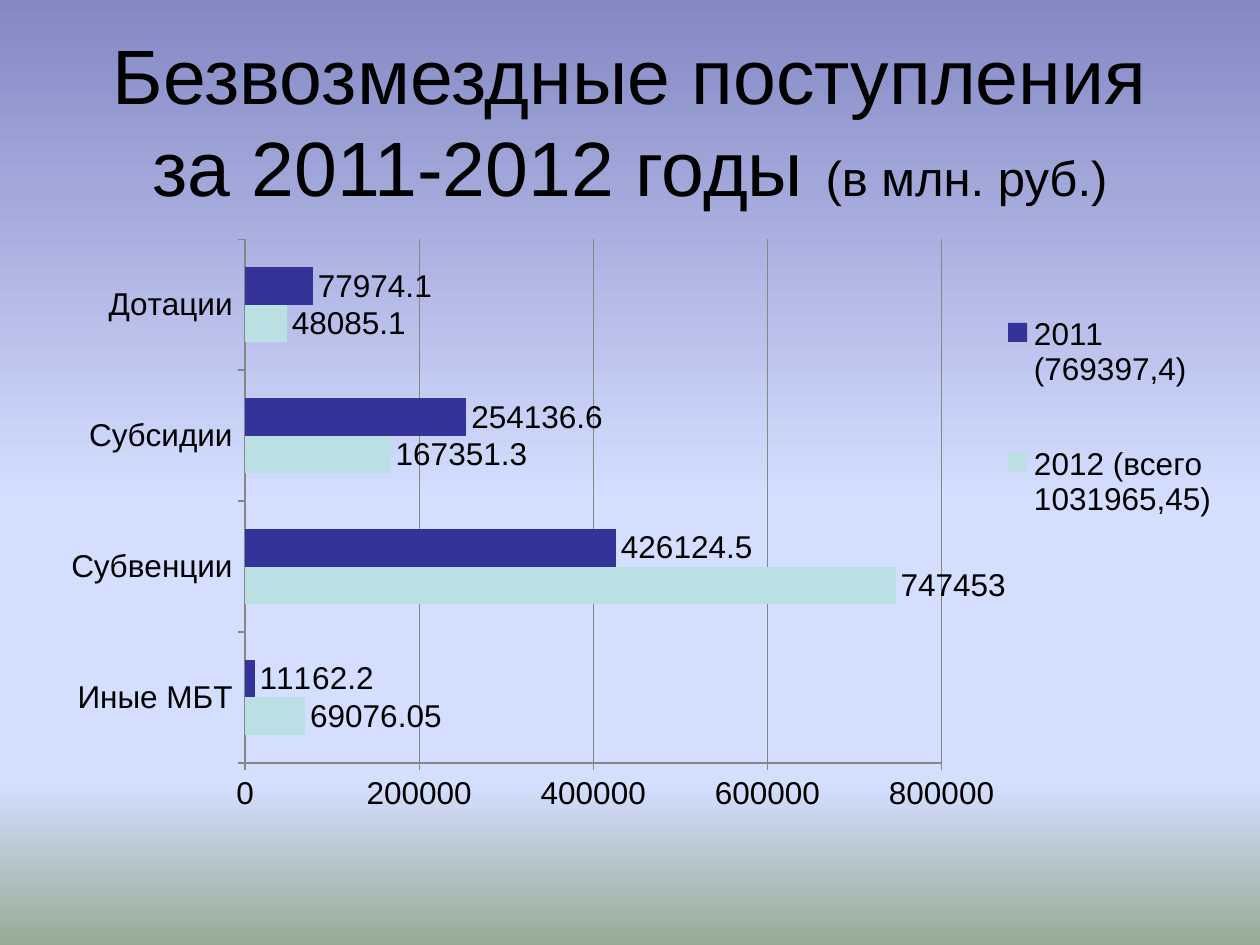
from lxml import etree
from pptx import Presentation
from pptx.chart.data import CategoryChartData
from pptx.dml.color import RGBColor
from pptx.enum import chart as charts, text
from pptx.oxml import parse_xml
from pptx.oxml.ns import nsdecls, qn
from pptx.util import Pt

BLACK = RGBColor(0x00, 0x00, 0x00)
GRAY = RGBColor(0x86, 0x86, 0x86)
BLUE = RGBColor(0x33, 0x33, 0x99)
AQUA = RGBColor(0xBB, 0xE0, 0xE3)
LILAC = RGBColor(0x84, 0x88, 0xC4)
SKY = RGBColor(0xD4, 0xDE, 0xFF)
GREEN = RGBColor(0x96, 0xAB, 0x94)
FONT = "Arial"


def set_layout(element, x, y, width, height, inner=False):
    for old in element.findall(qn("c:layout")):
        element.remove(old)
    layout = parse_xml(f"<c:layout {nsdecls('c')}><c:manualLayout/></c:layout>")
    values = [("layoutTarget", "inner")] if inner else []
    values += [("xMode", "edge"), ("yMode", "edge"),
               ("x", x), ("y", y), ("w", width), ("h", height)]
    for name, value in values:
        etree.SubElement(layout[0], qn(f"c:{name}")).set("val", str(value))
    return layout


presentation = Presentation()
presentation.slide_width, presentation.slide_height = Pt(720), Pt(540)
slide = presentation.slides.add_slide(presentation.slide_layouts[6])

background = slide.background.fill
background.gradient()
background.gradient_angle = 270
stops = background.gradient_stops[0]._gs.getparent()
for stop in list(stops):
    stops.remove(stop)
for percent, color in [(0, LILAC), (53, SKY), (83, SKY), (100, GREEN)]:
    stop = etree.SubElement(stops, qn("a:gs"), pos=str(percent * 1000))
    etree.SubElement(stop, qn("a:srgbClr"), val=str(color))

title = slide.shapes.add_textbox(Pt(36), Pt(33.84), Pt(648), Pt(101.52))
frame = title.text_frame
frame.word_wrap = True
frame.vertical_anchor = text.MSO_ANCHOR.MIDDLE
frame.margin_bottom = Pt(36)
paragraph = frame.paragraphs[0]
paragraph.alignment = text.PP_ALIGN.CENTER
paragraph.font.name = FONT
paragraph.font.color.rgb = BLACK
for wording, size in [("Безвозмездные поступления за 2011-2012 годы ", 44), ("(в млн. руб.)", 28)]:
    run = paragraph.add_run()
    run.text = wording
    run.font.size = Pt(size)

data = CategoryChartData()
data.categories = ["Иные МБТ", "Субвенции", "Субсидии", "Дотации"]
data.add_series("2012 (всего 1031965,45)", (69076.05, 747453, 167351.3, 48085.1))
data.add_series("2011 (769397,4)", (11162.2, 426124.5, 254136.6, 77974.1))
chart = slide.shapes.add_chart(charts.XL_CHART_TYPE.BAR_CLUSTERED,
                               Pt(16.56), Pt(126), Pt(686.16), Pt(356.4), data).chart
chart.has_title = False
chart.font.name = FONT
chart.font.size = Pt(18)
chart.font.color.rgb = BLACK

plot = chart.plots[0]
plot.gap_width = 150
plot.overlap = 0
plot.vary_by_categories = False
for series, color in zip(plot.series, [AQUA, BLUE]):
    series.format.fill.solid()
    series.format.fill.fore_color.rgb = color
    labels = series.data_labels
    labels.show_value = True
    labels.position = charts.XL_LABEL_POSITION.OUTSIDE_END

chart.value_axis.minimum_scale = 0
chart.value_axis.maximum_scale = 800000
chart.value_axis.major_unit = 200000
chart.value_axis.has_major_gridlines = True
for axis in (chart.category_axis, chart.value_axis):
    axis.major_tick_mark = charts.XL_TICK_MARK.OUTSIDE
    axis.format.line.color.rgb = GRAY
    axis.format.line.width = Pt(0.75)
gridlines = chart.value_axis.major_gridlines.format.line
gridlines.color.rgb = GRAY
gridlines.width = Pt(0.75)

chart.has_legend = True
chart.legend.position = charts.XL_LEGEND_POSITION.RIGHT
chart.legend.include_in_layout = False
legend = chart.legend._element
legend.find(qn("c:legendPos")).addnext(set_layout(legend, 0.8, 0.06, 0.2, 0.51))
plot_area = plot._element.getparent()
plot_area.insert(0, set_layout(plot_area, 0.18, 0.03, 0.58, 0.84, inner=True))

presentation.save("out.pptx")
